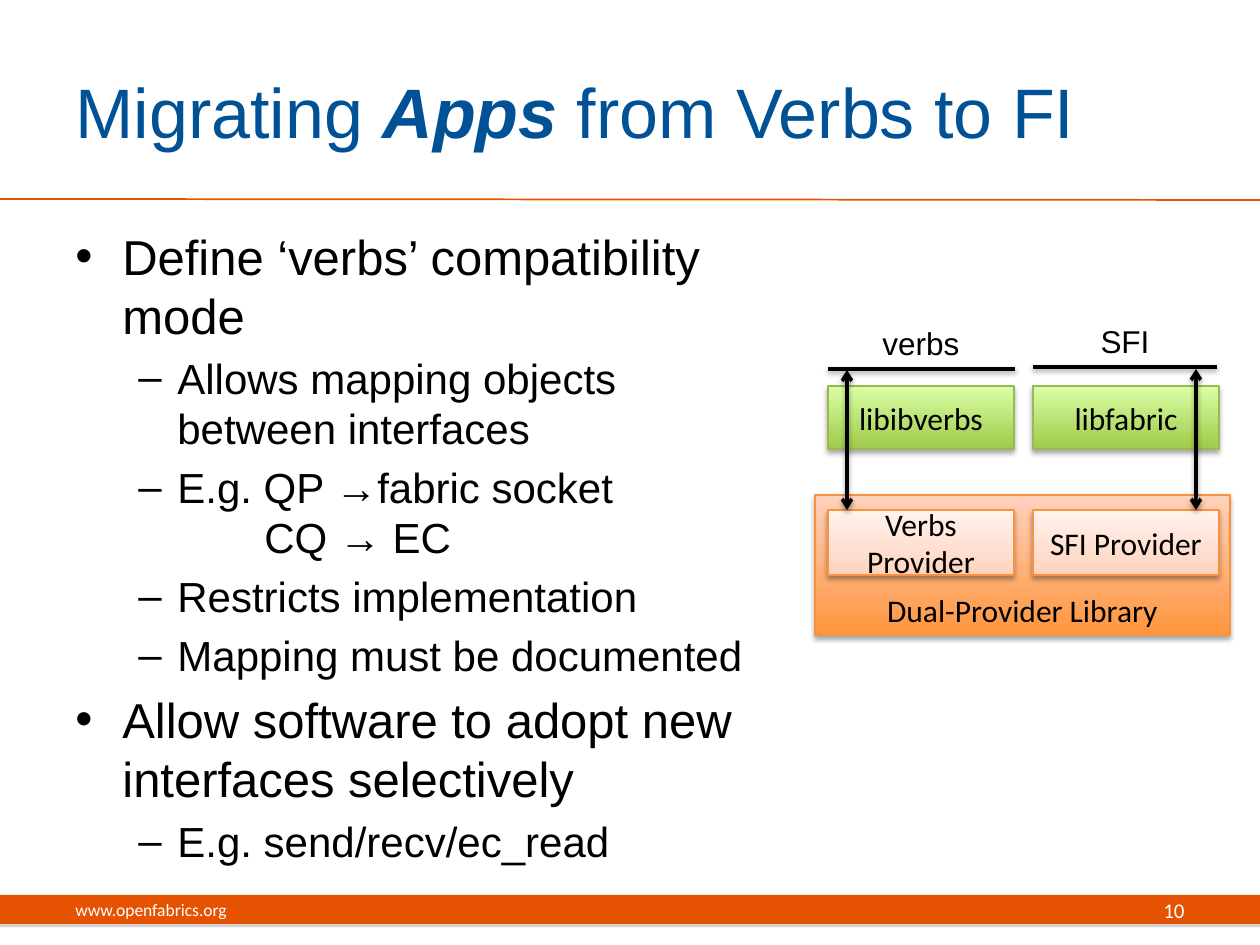
"""Build the slide on migrating apps from Verbs to FI."""
from copy import deepcopy

from lxml import etree
from pptx import Presentation
from pptx.dml.color import RGBColor
from pptx.enum.shapes import MSO_CONNECTOR, MSO_SHAPE
from pptx.enum.text import MSO_ANCHOR, PP_ALIGN
from pptx.oxml import parse_xml
from pptx.oxml.ns import qn
from pptx.util import Pt

PX = 7257
RECTANGLE = MSO_SHAPE.RECTANGLE
STRAIGHT = MSO_CONNECTOR.STRAIGHT
TOP, MIDDLE, BOTTOM = MSO_ANCHOR.TOP, MSO_ANCHOR.MIDDLE, MSO_ANCHOR.BOTTOM
LEFT, CENTER, RIGHT = PP_ALIGN.LEFT, PP_ALIGN.CENTER, PP_ALIGN.RIGHT
NAMESPACE = "http://schemas.openxmlformats.org/drawingml/2006/main"
color = RGBColor.from_string


def write(para, text, size=18, font="Arial", fill="000000", align=LEFT, emphasis=False):
    para.alignment = align
    for number, line in enumerate(text.split("\n")):
        if number:
            para.add_line_break()
        span = para.add_run()
        span.text = line
        span.font.size = Pt(size)
        span.font.name = font
        span.font.color.rgb = color(fill)
        span.font.bold = span.font.italic = emphasis


def set_shadow(shape, fill="000000", alpha=38, blur=3.1, distance=1.6):
    for effects in shape._element.spPr.findall(qn("a:effectLst")):
        shape._element.spPr.remove(effects)
    shape._element.spPr.append(parse_xml(
        f'<a:effectLst xmlns:a="{NAMESPACE}"><a:outerShdw blurRad="{Pt(blur)}" '
        f'dist="{Pt(distance)}" dir="5400000" rotWithShape="0"><a:srgbClr val="{fill}">'
        f'<a:alpha val="{alpha * 1000}"/></a:srgbClr></a:outerShdw></a:effectLst>'))


deck = Presentation()
deck.slide_width, deck.slide_height = 1260 * PX, 945 * PX
page = deck.slides.add_slide(deck.slide_layouts[5])

footer = page.shapes.add_shape(RECTANGLE, 0, 895 * PX, 1260 * PX, 29 * PX)
footer.fill.solid()
footer.fill.fore_color.rgb = color("E55302")
footer.line.fill.background()
set_shadow(footer, "808080", 35, 0, 1.8)

rule = page.shapes.add_connector(STRAIGHT, 0, 199 * PX, 1260 * PX, 200 * PX)
rule.line.color.rgb = color("E55302")
rule.line.width = Pt(1)
etree.SubElement(rule._element.spPr, qn("a:effectLst"))

title = page.shapes.title
title.left, title.top, title.width, title.height = 63 * PX, 32 * PX, 1029 * PX, 157 * PX
title.text_frame.vertical_anchor = MIDDLE
for text, emphasis in (("Migrating ", False), ("Apps", True), (" from Verbs to FI", False)):
    write(title.text_frame.paragraphs[0], text, size=40, fill="005195", emphasis=emphasis)

POINTS = (
    (0, "Define ‘verbs’ compatibility mode"),
    (1, "Allows mapping objects between interfaces"),
    (1, "E.g. QP →fabric socket\n\t\tCQ → EC"),
    (1, "Restricts implementation"),
    (1, "Mapping must be documented"),
    (0, "Allow software to adopt new interfaces selectively"),
    (1, "E.g. send/recv/ec_read"),
)
LEVELS = ((28, "•", 47, 47), (24, "–", 102, 39))
body = page.shapes.add_textbox(63 * PX, 220 * PX, 716 * PX, 624 * PX).text_frame
body.word_wrap = True
for number, (level, text) in enumerate(POINTS):
    size, bullet, margin, hanging = LEVELS[level]
    para = body.add_paragraph() if number else body.paragraphs[0]
    para.level = level
    properties = para._p.get_or_add_pPr()
    properties.set("marL", str(margin * PX))
    properties.set("indent", str(-hanging * PX))
    properties.set("defTabSz", "457200")
    etree.SubElement(properties, qn("a:buFont"), typeface="Arial")
    etree.SubElement(properties, qn("a:buChar"), char=bullet)
    if number:
        para.space_before = Pt(size * 0.2)
    write(para, text, size=size)

GREEN = ((0, "A0CA4A"), (1, "DAFFA5"))
ORANGE = ((0, "FF953E"), (1, "FFD2BD"))
PEACH = ((0, "FFD2BD"), (0.35, "FFDED0"), (1, "FFF2ED"))
BLOCKS = (
    ("libfabric", 1033, 386, 186, 63, GREEN, "98B955", MIDDLE),
    ("libibverbs", 828, 386, 186, 63, GREEN, "98B955", MIDDLE),
    ("Dual-Provider Library", 815, 495, 415, 140, ORANGE, "F69240", BOTTOM),
    ("SFI Provider", 1033, 510, 186, 65, PEACH, "F69240", MIDDLE),
    ("Verbs Provider", 828, 510, 186, 65, PEACH, "F69240", MIDDLE),
)
for text, left, top, width, height, stops, outline, anchor in BLOCKS:
    block = page.shapes.add_shape(RECTANGLE, left * PX, top * PX, width * PX, height * PX)
    block.fill.gradient()
    block.fill.gradient_angle = 90
    stop_list = block._element.spPr.find(".//" + qn("a:gsLst"))
    while len(stop_list) < len(stops):
        stop_list.append(deepcopy(stop_list[-1]))
    for stop, (position, shade) in zip(block.fill.gradient_stops, stops):
        stop.position = position
        stop.color.rgb = color(shade)
    block.line.color.rgb = color(outline)
    block.line.width = Pt(0.75)
    set_shadow(block, alpha=35, distance=1.8)
    block.text_frame.word_wrap = True
    block.text_frame.vertical_anchor = anchor
    write(block.text_frame.paragraphs[0], text, font="Calibri", align=CENTER)

LINES = (
    (828, 369, 1015, 369, False),
    (1033, 367, 1217, 367, False),
    (847, 370, 847, 510, True),
    (1196, 369, 1196, 510, True),
)
for left, top, right, bottom, arrows in LINES:
    line = page.shapes.add_connector(STRAIGHT, left * PX, top * PX, right * PX, bottom * PX)
    line.line.color.rgb = color("000000")
    line.line.width = Pt(2)
    if arrows:
        for end in ("a:headEnd", "a:tailEnd"):
            etree.SubElement(line.line._get_or_add_ln(), qn(end), type="arrow")
    set_shadow(line)

LABELS = (
    ("verbs", 828, 318, 186, 50, TOP, dict(align=CENTER)),
    ("SFI", 1033, 316, 184, 50, TOP, dict(align=CENTER)),
    ("www.openfabrics.org", 63, 885, 399, 50, MIDDLE,
     dict(size=10, font="Calibri", fill="FFFFFF")),
    ("10", 903, 885, 294, 50, MIDDLE,
     dict(size=12, font="Calibri", fill="FFFFFF", align=RIGHT)),
)
for text, left, top, width, height, anchor, style in LABELS:
    label = page.shapes.add_textbox(left * PX, top * PX, width * PX, height * PX).text_frame
    label.word_wrap = True
    label.vertical_anchor = anchor
    write(label.paragraphs[0], text, **style)

deck.save("out.pptx")
